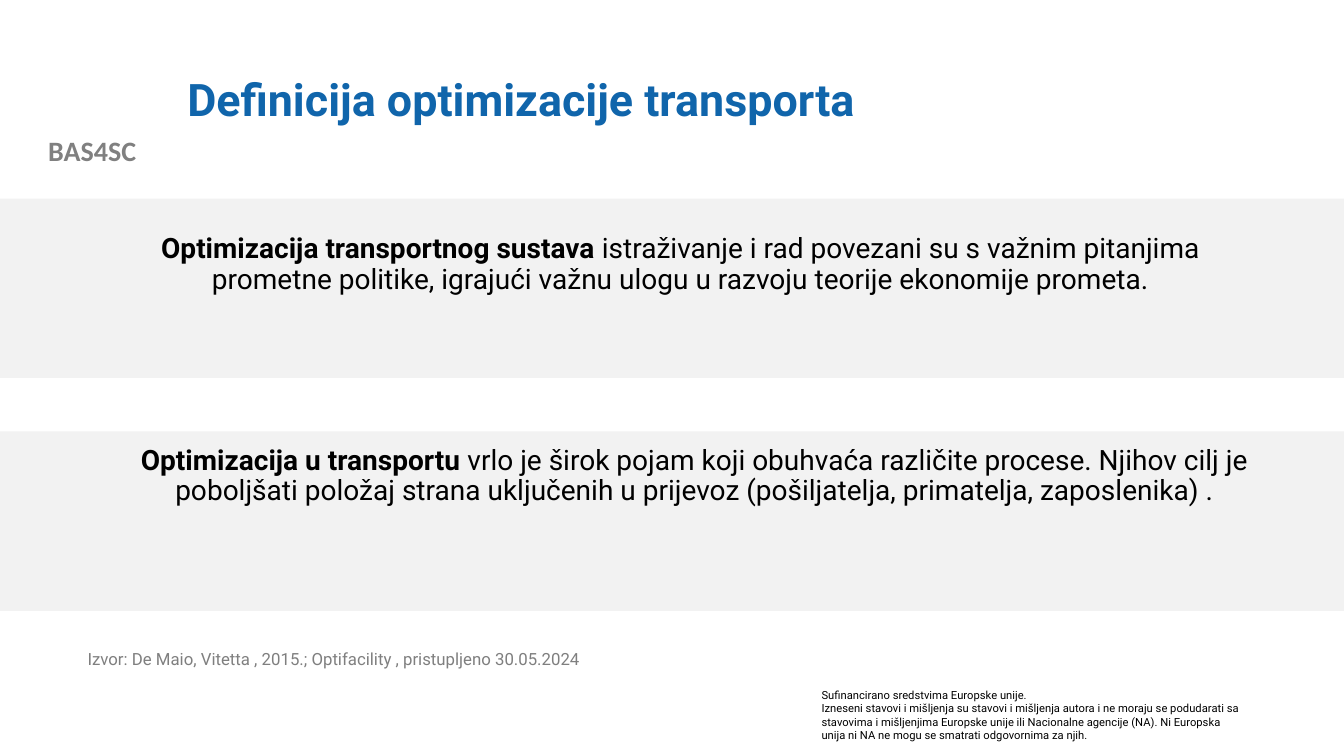
from pptx import Presentation
from pptx.dml.color import RGBColor
from pptx.enum.shapes import MSO_SHAPE as Shape
from pptx.enum.text import MSO_ANCHOR as Anchor, PP_ALIGN as Align
from pptx.util import Inches, Pt

WIDTH, HEIGHT = 13.33, 7.5


def color(value):
    return RGBColor.from_string(value)


class SlideBuilder:
    """Adds styled elements to one slide."""

    font_name = "Roboto"
    band_fill = "F2F2F2"
    band_height = 1.78

    def __init__(self, slide):
        self.slide = slide

    def band(self, top):
        shape = self.slide.shapes.add_shape(
            Shape.RECTANGLE, 0, Inches(top), Inches(WIDTH), Inches(self.band_height))
        shape.shadow.inherit = False
        shape.fill.solid()
        shape.fill.fore_color.rgb = color(self.band_fill)
        shape.line.fill.background()

    def text(self, box, paragraphs, size, ink="000000", align=Align.LEFT,
             anchor=Anchor.TOP, spacing=0.9, font=None):
        """Each paragraph is a list of (text, bold) pairs."""
        shape = self.slide.shapes.add_textbox(*map(Inches, box))
        frame = shape.text_frame
        frame.word_wrap = True
        frame.vertical_anchor = anchor
        for index, parts in enumerate(paragraphs):
            paragraph = frame.add_paragraph() if index else frame.paragraphs[0]
            paragraph.alignment = align
            paragraph.line_spacing = spacing
            for words, bold in parts:
                run = paragraph.add_run()
                run.text = words
                run.font.name = font or self.font_name
                run.font.size = Pt(size)
                run.font.bold = bold
                run.font.color.rgb = color(ink)

    def definition(self, box, term, explanation):
        self.text(box, [[(term, True), (explanation, False)]], 20, align=Align.CENTER)


def main():
    presentation = Presentation()
    presentation.slide_width = Inches(WIDTH)
    presentation.slide_height = Inches(HEIGHT)
    builder = SlideBuilder(presentation.slides.add_slide(presentation.slide_layouts[6]))

    builder.text((0, 1.28, 1.83, 0.44), [[("BAS4SC", True)]], 20, "808080",
                 align=Align.CENTER, spacing=1.0, font="Calibri")
    builder.text((8.05, 6.78, 4.37, 0.64), [
        [("Sufinancirano sredstvima Europske unije.", False)],
        [("Izneseni stavovi i mišljenja su stavovi i mišljenja autora i ne moraju se "
          "podudarati sa stavovima i mišljenjima Europske unije ili Nacionalne agencije "
          "(NA). Ni Europska unija ni NA ne mogu se smatrati odgovornima za njih.", False)],
    ], 8, spacing=1.0)

    for top in (1.97, 4.28):
        builder.band(top)

    builder.text((1.76, 0.4, 10.66, 1.22), [[("Definicija optimizacije transporta", True)]],
                 32, "1065AB", anchor=Anchor.MIDDLE)
    builder.definition(
        (1, 2.28, 11.5, 1.69), "Optimizacija transportnog sustava ",
        "istraživanje i rad povezani su s važnim pitanjima prometne politike, "
        "igrajući važnu ulogu u razvoju teorije ekonomije prometa.")
    builder.definition(
        (0.93, 4.38, 11.92, 1.69), "Optimizacija u transportu ",
        "vrlo je širok pojam koji obuhvaća različite procese. Njihov cilj je poboljšati "
        "položaj strana uključenih u prijevoz (pošiljatelja, primatelja, zaposlenika) .")
    builder.text((0.77, 6.41, 5.6, 0.52), [[(
        "Izvor: De Maio, Vitetta , 2015.; Optifacility , pristupljeno 30.05.2024", False)]],
        12, "7F7F7F")

    presentation.save("out.pptx")


if __name__ == "__main__":
    main()
